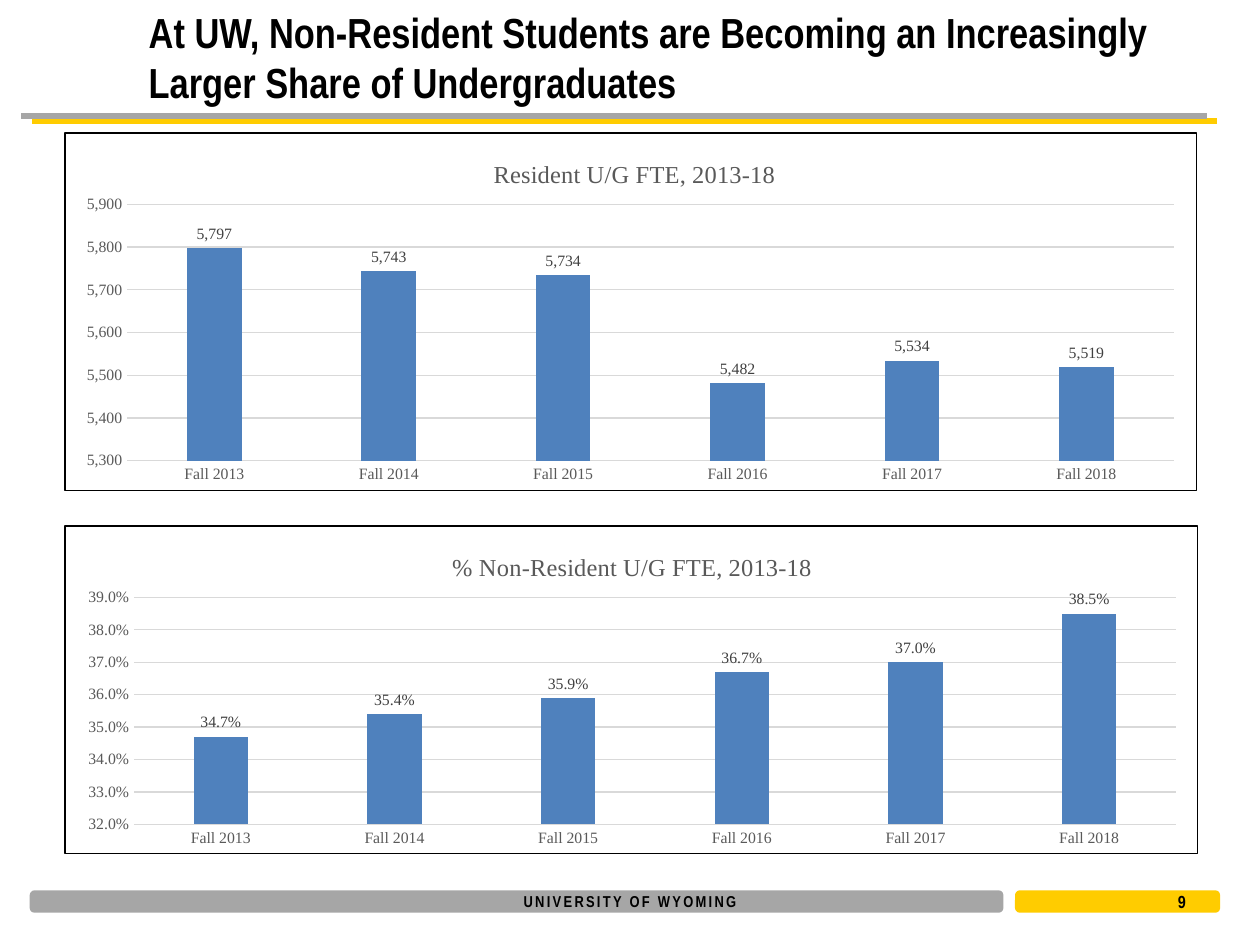
from dataclasses import dataclass

from lxml import etree
from pptx import Presentation
from pptx import util as u
from pptx.chart.data import CategoryChartData
from pptx.dml.color import RGBColor
from pptx.enum import chart as charts, shapes, text
from pptx.oxml import parse_xml
from pptx.oxml.ns import nsdecls, qn


@dataclass(frozen=True)
class Theme:
    gray: str = "A6A6A6"
    gold: str = "FFCC00"
    black: str = "000000"
    bar: str = "4F81BD"
    grid: str = "D9D9D9"
    axis_text: str = "595959"
    label_text: str = "404040"
    heading_font: str = "Arial Narrow"
    chart_font: str = "Times New Roman"
    title_size: float = 24
    chart_title_size: float = 14
    chart_size: float = 10
    axis_size: float = 9
    footer_size: float = 9
    number_size: float = 10


def style_font(font, name, size, color, bold=False):
    font.name = name
    font.size = u.Pt(size)
    font.bold = bold
    font.color.rgb = RGBColor.from_string(color)


def write_text(frame, content, *, font, size, color, bold=True, wrap=True,
               align=text.PP_ALIGN.LEFT, spacing=None):
    """Put one formatted paragraph into a text frame."""
    frame.word_wrap = wrap
    frame.auto_size = text.MSO_AUTO_SIZE.NONE
    frame.vertical_anchor = text.MSO_ANCHOR.MIDDLE
    paragraph = frame.paragraphs[0]
    paragraph.alignment = align
    run = paragraph.add_run()
    run.text = content
    style_font(run.font, font, size, color, bold)
    if spacing:
        run.font._element.set("spc", str(round(spacing * 100)))


def manual_layout(inner=False, **fractions):
    """Chart layout with its position given as fractions of the chart."""
    target = '<c:layoutTarget val="inner"/>' if inner else ""
    modes = '<c:xMode val="edge"/><c:yMode val="edge"/>'
    values = "".join(f'<c:{key} val="{value}"/>' for key, value in fractions.items())
    return parse_xml(f'<c:layout {nsdecls("c")}><c:manualLayout>{target}{modes}{values}'
                     '</c:manualLayout></c:layout>')


class SlideBuilder:
    def __init__(self, slide, theme):
        self.slide = slide
        self.theme = theme

    def title(self, content, left, top, width, height):
        shape = self.slide.shapes.title
        shape.left, shape.top = u.Inches(left), u.Inches(top)
        shape.width, shape.height = u.Inches(width), u.Inches(height)
        write_text(shape.text_frame, content, font=self.theme.heading_font,
                   size=self.theme.title_size, color=self.theme.black)

    def text_box(self, content, left, top, width, height, **style):
        box = self.slide.shapes.add_textbox(*map(u.Inches, (left, top, width, height)))
        write_text(box.text_frame, content, font=self.theme.heading_font,
                   color=self.theme.black, **style)

    def rule(self, left, right, y, color):
        line = self.slide.shapes.add_connector(
            shapes.MSO_CONNECTOR.STRAIGHT, *map(u.Inches, (left, y, right, y)))
        line.line.width = u.Pt(3)
        line.line.color.rgb = RGBColor.from_string(color)
        etree.SubElement(line._element.spPr, qn("a:effectLst"))

    def footer_bar(self, left, width, color):
        shape = self.slide.shapes.add_shape(
            shapes.MSO_SHAPE.ROUNDED_RECTANGLE, *map(u.Inches, (left, 7.08, width, 0.15)))
        shape.shadow.inherit = False
        shape.fill.solid()
        shape.fill.fore_color.rgb = RGBColor.from_string(color)
        shape.line.color.rgb = RGBColor.from_string(color)
        shape.line.width = u.Pt(2)

    def column_chart(self, heading, categories, values, box, number_format, scale,
                     heading_at, plot_area):
        theme = self.theme
        data = CategoryChartData(number_format=number_format)
        data.categories = categories
        data.add_series("Series 1", values)
        chart = self.slide.shapes.add_chart(
            charts.XL_CHART_TYPE.COLUMN_CLUSTERED, *map(u.Inches, box), data).chart
        chart.has_legend = False
        style_font(chart.font, theme.chart_font, theme.chart_size, theme.black)

        # Heading
        frame = chart.chart_title.text_frame
        run = frame.paragraphs[0].add_run()
        run.text = heading
        style_font(run.font, theme.chart_font, theme.chart_title_size, theme.axis_text)
        chart.chart_title.include_in_layout = False
        self.place(chart.chart_title._element, manual_layout(**heading_at), "c:tx")

        # Axes
        category_axis, value_axis = chart.category_axis, chart.value_axis
        for axis in (category_axis, value_axis):
            axis.major_tick_mark = axis.minor_tick_mark = charts.XL_TICK_MARK.NONE
            style_font(axis.tick_labels.font, theme.chart_font, theme.axis_size,
                       theme.axis_text)
        value_axis.minimum_scale, value_axis.maximum_scale, value_axis.major_unit = scale
        value_axis.tick_labels.number_format = number_format
        value_axis.tick_labels.number_format_is_linked = False
        value_axis.format.line.fill.background()
        for line in (category_axis.format.line, value_axis.major_gridlines.format.line):
            line.color.rgb = RGBColor.from_string(theme.grid)
            line.width = u.Pt(0.75)

        # Columns and their labels
        plot = chart.plots[0]
        plot.gap_width, plot.overlap = 219, -27
        plot.vary_by_categories = False
        fill = plot.series[0].format.fill
        fill.solid()
        fill.fore_color.rgb = RGBColor.from_string(theme.bar)
        plot.has_data_labels = True
        labels = plot.data_labels
        labels.show_value = True
        labels.number_format = number_format
        labels.number_format_is_linked = False
        labels.position = charts.XL_LABEL_POSITION.OUTSIDE_END
        style_font(labels.font, theme.chart_font, theme.axis_size, theme.label_text)

        # Plot area and frame
        chart_space = chart._chartSpace
        area = chart_space.chart.plotArea
        self.place(area, manual_layout(inner=True, **plot_area))
        chart_space.chart.addnext(parse_xml(
            f'<c:spPr {nsdecls("c", "a")}><a:solidFill><a:srgbClr val="FFFFFF"/></a:solidFill>'
            f'<a:ln w="{u.Pt(0.75)}"><a:solidFill><a:srgbClr val="{theme.black}"/>'
            '</a:solidFill></a:ln></c:spPr>'))

    @staticmethod
    def place(parent, layout, after=None):
        """Replace the layout of a chart part."""
        for old in parent.findall(qn("c:layout")):
            parent.remove(old)
        if after:
            parent.find(qn(after)).addnext(layout)
        else:
            parent.insert(0, layout)


def main():
    theme = Theme()
    presentation = Presentation()
    presentation.slide_width, presentation.slide_height = u.Inches(10), u.Inches(7.5)
    slide = presentation.slides.add_slide(presentation.slide_layouts[5])
    builder = SlideBuilder(slide, theme)

    # Title with its double rule
    builder.rule(0.25, 9.66, 0.96, theme.gold)
    builder.rule(0.17, 9.58, 0.92, theme.gray)
    builder.title("At UW, Non-Resident Students are Becoming an Increasingly "
                  "Larger Share of Undergraduates", 1.08, 0.15, 8.75, 0.6)

    # Footer
    builder.footer_bar(0.25, 7.7, theme.gray)
    builder.footer_bar(8.07, 1.6, theme.gold)
    builder.text_box("UNIVERSITY OF WYOMING", 4.1, 7.03, 1.8, 0.25, size=theme.footer_size,
                     wrap=False, align=text.PP_ALIGN.CENTER, spacing=1.3)
    builder.text_box("9", 9.25, 7.06, 0.5, 0.19, size=theme.number_size)

    # Charts
    terms = [f"Fall {year}" for year in range(2013, 2019)]
    builder.column_chart(
        "Resident U/G FTE, 2013-18", terms, [5797, 5743, 5734, 5482, 5534, 5519],
        (0.51, 1.05, 8.99, 2.85), "#,##0", (5300, 5900, 100),
        dict(x=0.375, y=0.06), dict(x=0.055, y=0.2, w=0.925, h=0.716))
    builder.column_chart(
        "% Non-Resident U/G FTE, 2013-18", terms, [0.347, 0.354, 0.359, 0.367, 0.37, 0.385],
        (0.51, 4.17, 9, 2.61), "0.0%", (0.32, 0.39, 0.01),
        dict(x=0.338, y=0.063), dict(x=0.061, y=0.218, w=0.92, h=0.693))

    presentation.save("out.pptx")


if __name__ == "__main__":
    main()
